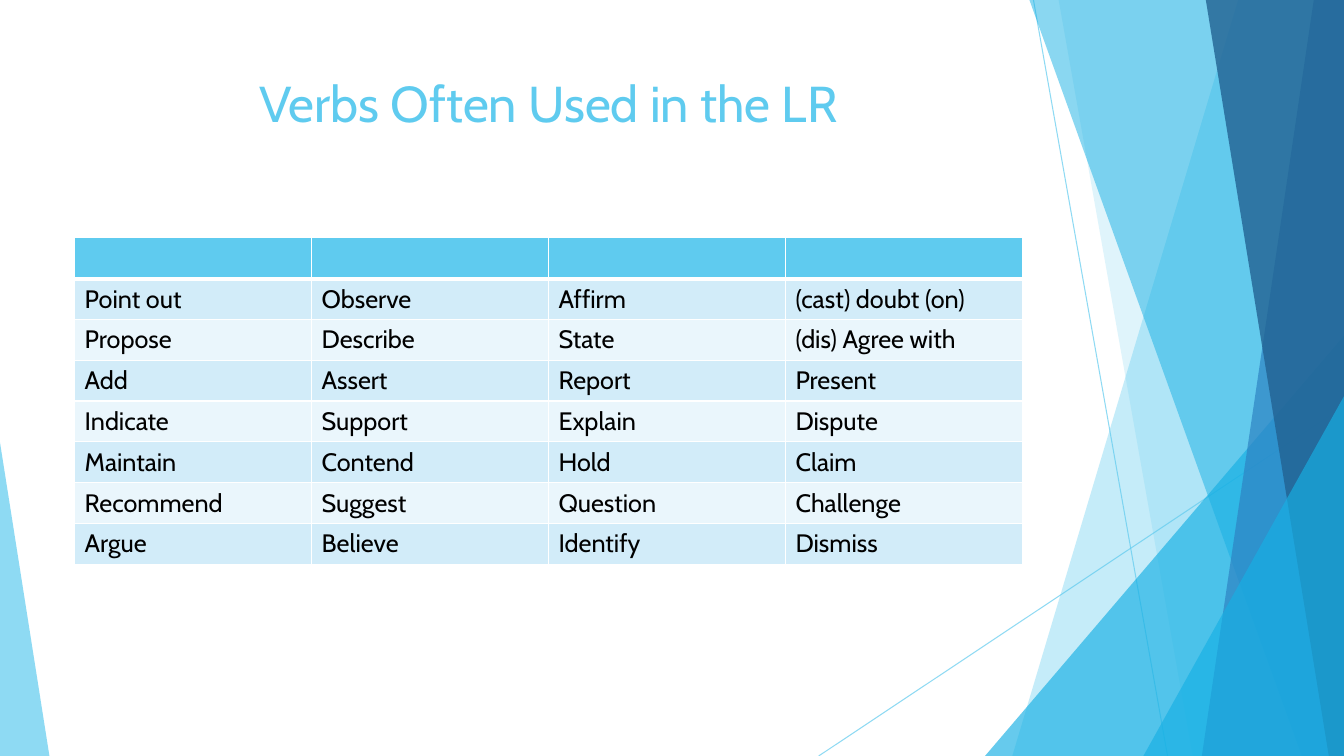
import pptx
import pptx.dml.color
import pptx.enum.shapes
import pptx.enum.text
import pptx.oxml
import pptx.oxml.ns
import pptx.util
from pptx.util import Inches

TITLE = "Verbs Often Used in the LR"
VERBS = [
    ("Point out", "Observe", "Affirm", "(cast) doubt (on)"),
    ("Propose", "Describe", "State", "(dis) Agree with"),
    ("Add", "Assert", "Report", "Present"),
    ("Indicate", "Support", "Explain", "Dispute"),
    ("Maintain", "Contend", "Hold", "Claim"),
    ("Recommend", "Suggest", "Question", "Challenge"),
    ("Argue", "Believe", "Identify", "Dismiss"),
]
THEME = {
    "font": "Cabin", "title_size": 36, "body_size": 18,
    "sky": "5FCBEF", "cyan": "17B0E4", "blue": "2E83C3", "navy": "226292",
    "odd_row": "D2ECF9", "even_row": "EAF6FC", "border": "FFFFFF", "text": "000000",
}
WIDTH, HEIGHT = 13.33, 7.5
LEFT, CONTENT_WIDTH = 0.74, 9.4
TABLE_TOP, TABLE_HEIGHT = 2.36, 3.24

RAYS = [((10.25, 0), (11.58, HEIGHT)), ((WIDTH, 4.03), (8.12, HEIGHT))]
# Each band runs to the right edge: top-left x, bottom-left x, colour, opacity.
BANDS_BEHIND = [(12.28, 10.04, "sky", 36), (10.5, 11.83, "sky", 20)]
BANDS_FRONT = [(10.21, 12.91, "cyan", 50), (13.03, 11.92, "blue", 70), (11.96, 13.18, "navy", 80)]
# Each triangle stands on the bottom edge: left, top, width, apex, colour, opacity.
TRIANGLE_BEHIND = (9.77, 3.33, 3.56, 1, "cyan", 66)
TRIANGLES_FRONT = [(11.34, 3.93, 1.99, 1, "cyan", 66), (0, 4.39, 0.49, 0, "sky", 70)]


def color(name):
    return pptx.dml.color.RGBColor.from_string(THEME[name])


def set_opacity(shape, percent):
    for node in shape.element.spPr.iter(pptx.oxml.ns.qn("a:srgbClr")):
        alpha = pptx.oxml.parse_xml(f'<a:alpha {pptx.oxml.ns.nsdecls("a")} val="{percent * 1000}"/>')
        node.append(alpha)


def paint(shape, fill, opacity):
    shape.shadow.inherit = False
    shape.fill.solid()
    shape.fill.fore_color.rgb = color(fill)
    shape.line.fill.background()
    set_opacity(shape, opacity)


def add_ray(slide, start, end):
    ray = slide.shapes.add_connector(
        pptx.enum.shapes.MSO_CONNECTOR.STRAIGHT, *map(Inches, start + end))
    ray.line.color.rgb = color("sky")
    ray.line.width = pptx.util.Pt(0.75)
    set_opacity(ray, 70)
    effects = pptx.oxml.parse_xml(f'<a:effectLst {pptx.oxml.ns.nsdecls("a")}/>')
    ray.element.spPr.append(effects)


def add_band(slide, top_x, bottom_x, fill, opacity):
    builder = slide.shapes.build_freeform(Inches(top_x), 0)
    corners = [(WIDTH, 0), (WIDTH, HEIGHT), (bottom_x, HEIGHT)]
    builder.add_line_segments([(Inches(x), Inches(y)) for x, y in corners], close=True)
    paint(builder.convert_to_shape(), fill, opacity)


def add_triangle(slide, left, top, width, apex, fill, opacity):
    triangle = slide.shapes.add_shape(
        pptx.enum.shapes.MSO_SHAPE.ISOSCELES_TRIANGLE,
        Inches(left), Inches(top), Inches(width), Inches(HEIGHT - top))
    triangle.adjustments[0] = apex
    paint(triangle, fill, opacity)


def write(paragraph, text, size, name):
    paragraph.text = text
    for run in paragraph.runs:
        run.font.name = THEME["font"]
        run.font.size = pptx.util.Pt(THEME[size])
        run.font.bold = False
        run.font.color.rgb = color(name)


def format_cell(cell, fill, top, bottom):
    properties = cell._tc.get_or_add_tcPr()
    for side, points in (("L", 1), ("R", 1), ("T", top), ("B", bottom)):
        properties.append(pptx.oxml.parse_xml(
            f'<a:ln{side} {pptx.oxml.ns.nsdecls("a")} w="{pptx.util.Pt(points)}"><a:solidFill>'
            f'<a:srgbClr val="{THEME["border"]}"/></a:solidFill></a:ln{side}>'))
    cell.fill.solid()
    cell.fill.fore_color.rgb = color(fill)


def add_background(slide):
    for start, end in RAYS:
        add_ray(slide, start, end)
    for band in BANDS_BEHIND:
        add_band(slide, *band)
    add_triangle(slide, *TRIANGLE_BEHIND)
    for band in BANDS_FRONT:
        add_band(slide, *band)
    for triangle in TRIANGLES_FRONT:
        add_triangle(slide, *triangle)


def add_title(slide):
    box = slide.shapes.add_textbox(
        Inches(LEFT), Inches(0.67), Inches(CONTENT_WIDTH), Inches(1.44))
    box.text_frame.word_wrap = True
    paragraph = box.text_frame.paragraphs[0]
    paragraph.alignment = pptx.enum.text.PP_ALIGN.CENTER
    write(paragraph, TITLE, "title_size", "sky")


def add_verb_table(slide):
    rows = [("",) * len(VERBS[0])] + VERBS
    table = slide.shapes.add_table(
        len(rows), len(rows[0]), Inches(LEFT), Inches(TABLE_TOP),
        Inches(CONTENT_WIDTH), Inches(TABLE_HEIGHT)).table
    for row, verbs in enumerate(rows):
        fill = "sky" if row == 0 else "odd_row" if row % 2 else "even_row"
        for column, verb in enumerate(verbs):
            cell = table.cell(row, column)
            format_cell(cell, fill, 3 if row == 1 else 1, 3 if row == 0 else 1)
            if verb:
                write(cell.text_frame.paragraphs[0], verb, "body_size", "text")


def main():
    presentation = pptx.Presentation()
    presentation.slide_width = Inches(WIDTH)
    presentation.slide_height = Inches(HEIGHT)
    slide = presentation.slides.add_slide(presentation.slide_layouts[6])
    add_background(slide)
    add_title(slide)
    add_verb_table(slide)
    presentation.save("out.pptx")


if __name__ == "__main__":
    main()
